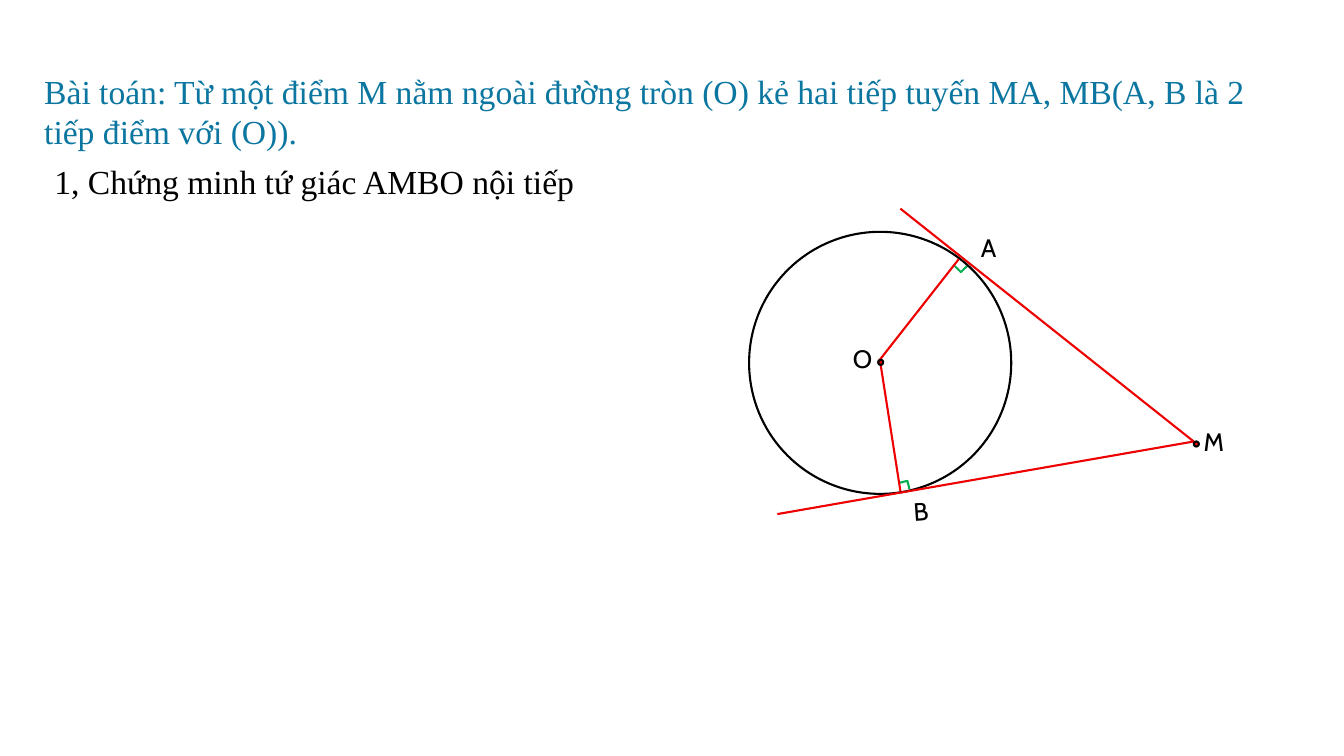
import pptx
import pptx.dml.color
import pptx.enum.shapes
import pptx.enum.text
import pptx.oxml.ns
import pptx.util
from lxml import etree
from pptx.util import Inches

BLACK, RED, GREEN, BLUE = "000000", "EE0000", "00B050", "0B76A0"
LABEL = {"name": "Cabin", "size": pptx.util.Pt(18)}
STATEMENT = {"name": "Times New Roman", "size": pptx.util.Pt(24)}


def color(value):
    return pptx.dml.color.RGBColor.from_string(value)


def set_line(item, line_color):
    item.line.color.rgb = color(line_color)
    item.line.width = pptx.util.Pt(1.5)


def add_text(page, text, area, font_format, text_color=BLACK, wrap=True, rotation=0):
    box = page.shapes.add_textbox(*map(Inches, area))
    box.rotation = rotation
    box.text_frame.word_wrap = wrap
    box.text_frame.auto_size = pptx.enum.text.MSO_AUTO_SIZE.SHAPE_TO_FIT_TEXT
    span = box.text_frame.paragraphs[0].add_run()
    span.text = text
    for name, value in font_format.items():
        setattr(span.font, name, value)
    span.font.color.rgb = color(text_color)


def add_circle(page, left, top, size, fill=None):
    circle = page.shapes.add_shape(
        pptx.enum.shapes.MSO_SHAPE.OVAL, *map(Inches, (left, top, size, size)))
    circle.shadow.inherit = False
    if fill:
        circle.fill.solid()
        circle.fill.fore_color.rgb = color(fill)
    else:
        circle.fill.background()
    set_line(circle, BLACK)


def add_segment(page, start, end):
    segment = page.shapes.add_connector(
        pptx.enum.shapes.MSO_CONNECTOR.STRAIGHT, *map(Inches, start + end))
    set_line(segment, RED)
    properties = segment.element.find(pptx.oxml.ns.qn("p:spPr"))
    etree.SubElement(properties, pptx.oxml.ns.qn("a:effectLst"))


def add_right_angle(page, *points):
    start, *rest = [tuple(map(Inches, point)) for point in points]
    builder = page.shapes.build_freeform(*start)
    builder.add_line_segments(rest, close=False)
    mark = builder.convert_to_shape()
    mark.shadow.inherit = False
    mark.fill.background()
    set_line(mark, GREEN)


def main():
    deck = pptx.Presentation()
    deck.slide_width, deck.slide_height = Inches(13.33), Inches(7.5)
    page = deck.slides.add_slide(deck.slide_layouts[6])

    # Right-angle marks at the tangent points B and A
    add_right_angle(page, (8.92, 4.79), (9, 4.77), (9.02, 4.85))
    add_right_angle(page, (9.47, 2.64), (9.53, 2.7), (9.59, 2.64))

    # Circle, radii and tangents
    point_m = (11.84, 4.38)
    add_circle(page, 7.43, 2.3, 2.6)
    add_segment(page, (8.71, 3.59), (9.51, 2.57))
    add_segment(page, (8.73, 3.59), (8.93, 4.87))
    add_segment(page, (7.71, 5.1), point_m)
    add_segment(page, (8.93, 2.07), point_m)

    # Points O and M
    for left, top in ((8.71, 3.57), point_m):
        add_circle(page, left, top, 0.05, RED)

    # Point labels
    for name, left, top, rotation in (
            ("O", 8.36, 3.36, 0), ("A", 9.63, 2.26, 0),
            ("B", 8.96, 4.87, 355.9), ("M", 11.84, 4.18, 0)):
        add_text(page, name, (left, top, 0.37, 0.4), LABEL, rotation=rotation)

    # Problem statement and question
    add_text(page, "1, Chứng minh tứ giác AMBO nội tiếp",
             (0.44, 1.55, 5.39, 0.5), STATEMENT, wrap=False)
    add_text(page, "Bài toán: Từ một điểm M nằm ngoài đường tròn (O) kẻ hai tiếp tuyến "
             "MA, MB(A, B là 2 tiếp điểm với (O)).",
             (0.34, 0.65, 12.11, 0.91), STATEMENT, BLUE)

    deck.save("out.pptx")


if __name__ == "__main__":
    main()
